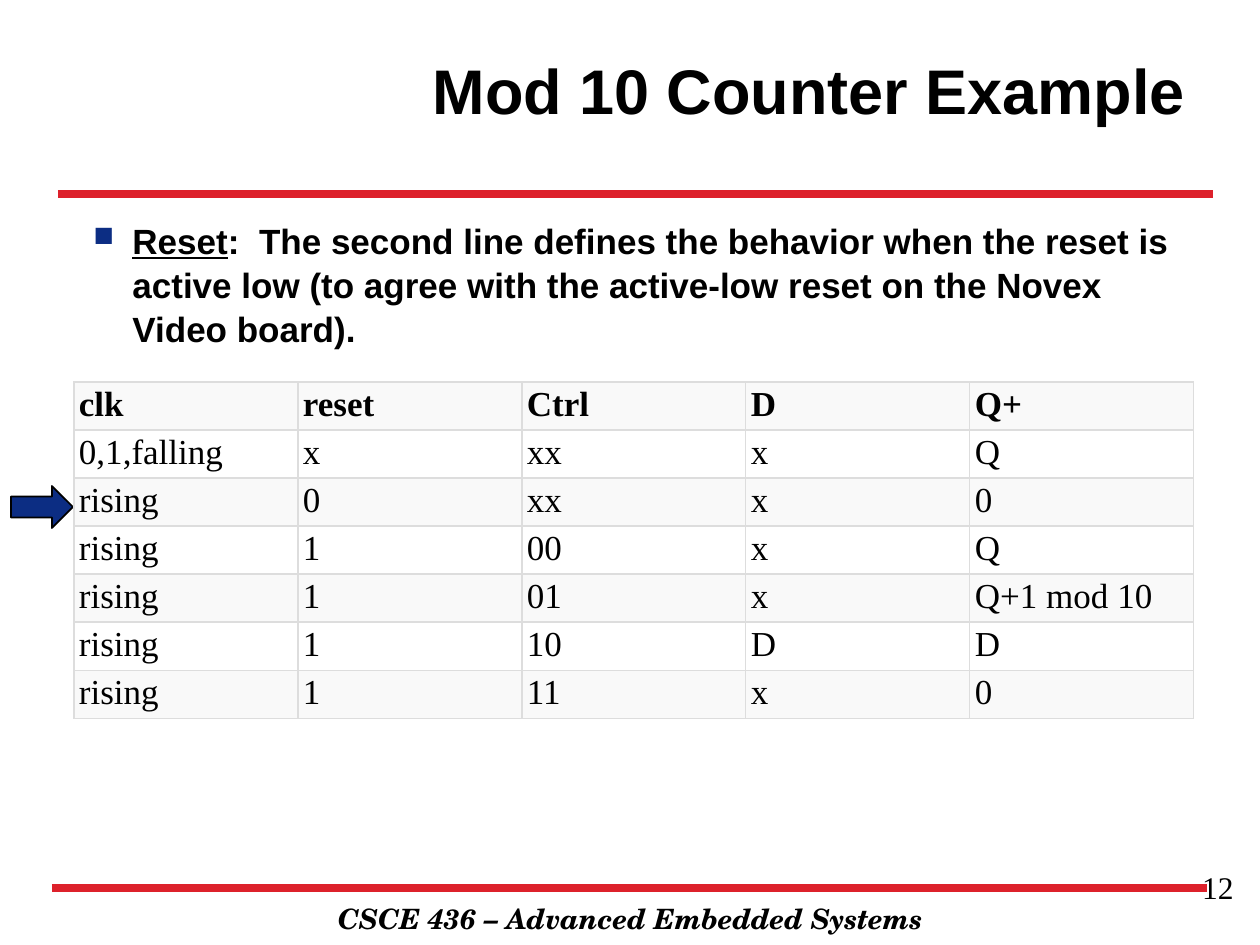
from pptx import Presentation, util as u
from pptx.dml.color import RGBColor
from pptx.enum import shapes, text
from pptx.oxml import parse_xml
from pptx.oxml.ns import nsdecls, qn
from lxml import etree

PX = 914400 // 126
BLACK = RGBColor(0, 0, 0)
WHITE = RGBColor(0xFF, 0xFF, 0xFF)
RED = RGBColor(0xDD, 0x21, 0x2B)
NAVY = RGBColor(0x0C, 0x2D, 0x83)
STRIPE = RGBColor(0xF9, 0xF9, 0xF9)
BORDER = RGBColor(0xDD, 0xDD, 0xDD)


def box(left, top, width, height):
    return [v * PX for v in (left, top, width, height)]


def add_run(p, words, font, size, bold=False, italic=False, underline=False):
    r = p.add_run()
    r.text = words
    f = r.font
    f.name, f.size, f.bold, f.italic, f.underline = font, u.Pt(size), bold, italic, underline
    f.color.rgb = BLACK


prs = Presentation()
prs.slide_width, prs.slide_height = u.Inches(10), u.Inches(7.5)
s = prs.slides.add_slide(prs.slide_layouts[5])

# Red rules above and below the content
for left, y in ((58, 194), (52, 888)):
    rule = s.shapes.add_connector(shapes.MSO_CONNECTOR.STRAIGHT, *box(left, y, left + 1155, y))
    rule.line.color.rgb = RED
    rule.line.width = u.Pt(4.5)
    etree.SubElement(rule.element.spPr, qn("a:effectLst"))

# Title
title = s.shapes.title
title.left, title.top, title.width, title.height = box(263, 10, 935, 158)
tf = title.text_frame
tf.vertical_anchor = text.MSO_ANCHOR.MIDDLE
p = tf.paragraphs[0]
p.alignment = text.PP_ALIGN.RIGHT
add_run(p, "Mod 10 Counter Example", "Arial", 36, bold=True)

# Bulleted statement
tf = s.shapes.add_textbox(*box(81, 211, 1120, 596)).text_frame
tf.word_wrap = True
p = tf.paragraphs[0]
p.line_spacing = 1.05
pPr = p._p.get_or_add_pPr()
pPr.set("marL", str(39 * PX))
pPr.set("indent", str(-39 * PX))
for bullet in (f'<a:buClr {nsdecls("a")}><a:srgbClr val="{NAVY}"/></a:buClr>',
               f'<a:buSzPct {nsdecls("a")} val="80000"/>',
               f'<a:buChar {nsdecls("a")} char="■"/>'):
    pPr.append(parse_xml(bullet))
add_run(p, "Reset", "Arial", 20, bold=True, underline=True)
add_run(p, ":  The second line defines the behavior when the reset is active low "
           "(to agree with the active-low reset on the Novex Video board).",
        "Arial", 20, bold=True)

# Footer and slide number
for place, align, words, font, size, strong in (
        (box(179, 895, 903, 47), text.PP_ALIGN.CENTER,
         "CSCE 436 – Advanced Embedded Systems", "TeX Gyre Schola", 16, True),
        (box(953, 862, 293, 66), text.PP_ALIGN.RIGHT, "12", "Times New Roman", 18, False)):
    tf = s.shapes.add_textbox(*place).text_frame
    tf.word_wrap = True
    p = tf.paragraphs[0]
    p.alignment = align
    add_run(p, words, font, size, bold=strong, italic=strong)

# Arrow pointing at the reset row
arrow = s.shapes.add_shape(shapes.MSO_SHAPE.RIGHT_ARROW, *box(11, 486, 62, 42))
arrow.shadow.inherit = False
arrow.fill.solid()
arrow.fill.fore_color.rgb = NAVY
arrow.line.color.rgb = BLACK
arrow.line.width = u.Pt(1)

# Counter behaviour table
ROWS = [
    ("clk", "reset", "Ctrl", "D", "Q+"),
    ("0,1,falling", "x", "xx", "x", "Q"),
    ("rising", "0", "xx", "x", "0"),
    ("rising", "1", "00", "x", "Q"),
    ("rising", "1", "01", "x", "Q+1 mod 10"),
    ("rising", "1", "10", "D", "D"),
    ("rising", "1", "11", "x", "0"),
]
table = s.shapes.add_table(len(ROWS), len(ROWS[0]), *box(74, 382, 1120, 326)).table
for i, row in enumerate(ROWS):
    for j, words in enumerate(row):
        cell = table.cell(i, j)
        cell.margin_left = cell.margin_right = 5 * PX
        cell.margin_top = cell.margin_bottom = 3 * PX
        tcPr = cell._tc.get_or_add_tcPr()
        for side in ("lnL", "lnR", "lnT", "lnB"):
            tcPr.append(parse_xml(
                f'<a:{side} {nsdecls("a")} w="{u.Pt(0.75)}"><a:solidFill>'
                f'<a:srgbClr val="{BORDER}"/></a:solidFill></a:{side}>'))
        cell.fill.solid()
        cell.fill.fore_color.rgb = WHITE if i % 2 else STRIPE
        add_run(cell.text_frame.paragraphs[0], words, "Times New Roman", 20, bold=i == 0)

prs.save("out.pptx")
